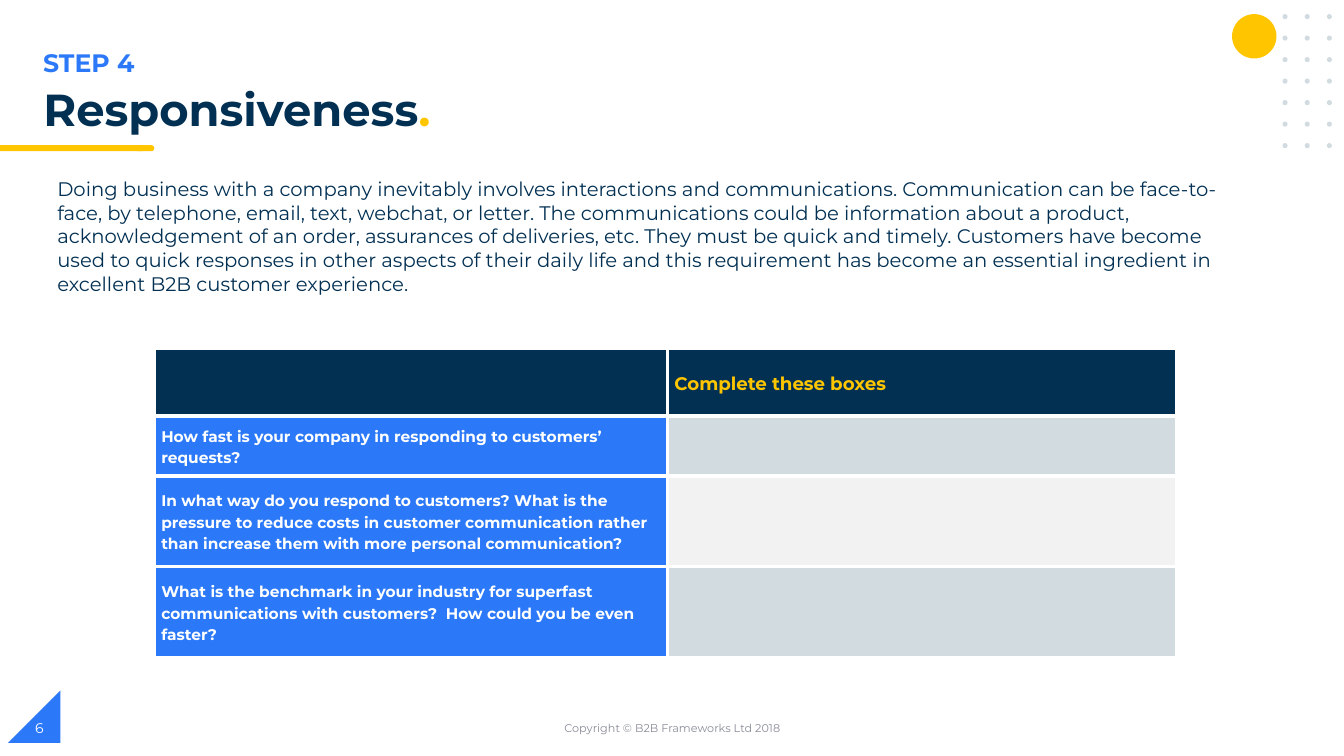
import dataclasses

import pptx
import pptx.dml.color
import pptx.enum.shapes
import pptx.enum.text
import pptx.oxml
import pptx.oxml.ns
import pptx.slide
import pptx.table
import pptx.text.text
import pptx.util

Inches = pptx.util.Inches
RGBColor = pptx.dml.color.RGBColor
Shape = pptx.enum.shapes.MSO_SHAPE
Align = pptx.enum.text.PP_ALIGN
Anchor = pptx.enum.text.MSO_ANCHOR

NAVY = RGBColor(0x02, 0x30, 0x53)
BLUE = RGBColor(0x2B, 0x79, 0xF8)
YELLOW = RGBColor(0xFF, 0xC6, 0x00)
MIST = RGBColor(0xD1, 0xDB, 0xE0)
PALE = RGBColor(0xF2, 0xF2, 0xF2)
GREY = RGBColor(0x88, 0x8C, 0x97)
WHITE = RGBColor(0xFF, 0xFF, 0xFF)
FONT = "Montserrat"


@dataclasses.dataclass(frozen=True)
class Box:
    left: float
    top: float
    width: float
    height: float

    def lengths(self) -> tuple[int, int, int, int]:
        return Inches(self.left), Inches(self.top), Inches(self.width), Inches(self.height)


@dataclasses.dataclass(frozen=True)
class Ornament:
    kind: Shape
    box: Box
    color: RGBColor
    flipped: bool = False


@dataclasses.dataclass(frozen=True)
class Label:
    box: Box
    text: str
    size: float
    color: RGBColor
    bold: bool = False
    align: Align = Align.LEFT
    anchor: Anchor = Anchor.TOP


@dataclasses.dataclass(frozen=True)
class Row:
    height: float
    question: str
    heading: str
    size: float
    fills: tuple[RGBColor, RGBColor]


DOTS = [
    Ornament(Shape.OVAL, Box(12.72 + 0.22 * column, 0.14 + 1.28 * row / 6, 0.05, 0.05), MIST)
    for row in range(7)
    for column in range(3)
]
ORNAMENTS = [
    Ornament(Shape.RIGHT_TRIANGLE, Box(0.08, 6.85, 0.52, 0.52), BLUE, flipped=True),
    Ornament(Shape.FLOWCHART_TERMINATOR, Box(1.34, 1.44, 0.19, 0.06), YELLOW),
    Ornament(Shape.RECTANGLE, Box(0, 1.44, 1.41, 0.06), YELLOW),
    Ornament(Shape.OVAL, Box(12.22, 0.14, 0.44, 0.44), YELLOW),
    *DOTS,
]
INTRODUCTION = (
    "Doing business with a company inevitably involves interactions and communications. "
    "Communication can be face-to-face, by telephone, email, text, webchat, or letter. "
    "The communications could be information about a product, acknowledgement of an order, "
    "assurances of deliveries, etc. They must be quick and timely. Customers have become used "
    "to quick responses in other aspects of their daily life and this requirement has become "
    "an essential ingredient in excellent B2B customer experience."
)
LABELS = [
    Label(Box(0.33, 0.42, 6.69, 0.4), "STEP 4", 18, BLUE, bold=True),
    Label(Box(0.47, 1.71, 11.87, 1.28), INTRODUCTION, 14, NAVY),
    Label(Box(4.42, 7.02, 4.5, 0.4), "Copyright © B2B Frameworks Ltd 2018", 8, GREY,
          align=Align.CENTER, anchor=Anchor.MIDDLE),
    Label(Box(0.25, 7.02, 3, 0.4), "6", 10, WHITE, anchor=Anchor.MIDDLE),
]
TITLE_BOX = Box(0.33, 0.82, 12.08, 0.56)
COLUMN_WIDTHS = (5.09, 5.05)
ROWS = [
    Row(0.68, "", "Complete these boxes", 13, (NAVY, NAVY)),
    Row(0.59, "How fast is your company in responding to customers’ requests?", "", 11,
        (BLUE, MIST)),
    Row(0.9, "In what way do you respond to customers? What is the pressure to reduce costs in "
        "customer communication rather than increase them with more personal communication?",
        "", 11, (BLUE, PALE)),
    Row(0.91, "What is the benchmark in your industry for superfast communications with "
        "customers?  How could you be even faster?", "", 11, (BLUE, MIST)),
]


def add_run(paragraph: pptx.text.text._Paragraph, text: str, size: float,
            color: RGBColor, bold: bool) -> None:
    run = paragraph.add_run()
    run.text = text
    run.font.name = FONT
    run.font.size = pptx.util.Pt(size)
    run.font.bold = bold
    run.font.color.rgb = color


def add_ornament(slide: pptx.slide.Slide, ornament: Ornament) -> None:
    shape = slide.shapes.add_shape(ornament.kind, *ornament.box.lengths())
    shape.shadow.inherit = False
    shape.fill.solid()
    shape.fill.fore_color.rgb = ornament.color
    shape.line.fill.background()
    if ornament.flipped:
        shape._element.spPr.xfrm.set("flipH", "1")


def add_label(slide: pptx.slide.Slide, label: Label) -> None:
    frame = slide.shapes.add_textbox(*label.box.lengths()).text_frame
    frame.word_wrap = True
    frame.vertical_anchor = label.anchor
    paragraph = frame.paragraphs[0]
    paragraph.alignment = label.align
    add_run(paragraph, label.text, label.size, label.color, label.bold)


def fill_title(slide: pptx.slide.Slide) -> None:
    title = slide.shapes.title
    title.left, title.top, title.width, title.height = TITLE_BOX.lengths()
    frame = title.text_frame
    frame.auto_size = pptx.enum.text.MSO_AUTO_SIZE.NONE
    frame.vertical_anchor = Anchor.TOP
    paragraph = frame.paragraphs[0]
    paragraph.alignment = Align.LEFT
    paragraph.line_spacing = 0.9
    add_run(paragraph, "Responsiveness", 32, NAVY, True)
    add_run(paragraph, ".", 32, YELLOW, True)


def add_borders(cell: pptx.table._Cell) -> None:
    properties = cell._tc.get_or_add_tcPr()
    for side in ("lnL", "lnR", "lnT", "lnB"):
        properties.append(pptx.oxml.parse_xml(
            f'<a:{side} {pptx.oxml.ns.nsdecls("a")} w="{pptx.util.Pt(3)}">'
            f'<a:solidFill><a:srgbClr val="{WHITE}"/></a:solidFill></a:{side}>'
        ))


def fill_cell(cell: pptx.table._Cell, text: str, size: float, color: RGBColor,
              fill: RGBColor) -> None:
    add_borders(cell)
    cell.fill.solid()
    cell.fill.fore_color.rgb = fill
    cell.vertical_anchor = Anchor.MIDDLE
    cell.margin_left = cell.margin_right = Inches(0.07)
    cell.margin_top = cell.margin_bottom = 0
    if text:
        paragraph = cell.text_frame.paragraphs[0]
        paragraph.line_spacing = 1.15
        add_run(paragraph, text, size, color, True)


def add_question_table(slide: pptx.slide.Slide) -> None:
    box = Box(1.53, 3.45, sum(COLUMN_WIDTHS), sum(row.height for row in ROWS))
    table = slide.shapes.add_table(len(ROWS), len(COLUMN_WIDTHS), *box.lengths()).table
    for column, width in zip(table.columns, COLUMN_WIDTHS):
        column.width = Inches(width)
    for index, row in enumerate(ROWS):
        table.rows[index].height = Inches(row.height)
        fill_cell(table.cell(index, 0), row.question, row.size, WHITE, row.fills[0])
        fill_cell(table.cell(index, 1), row.heading, row.size, YELLOW, row.fills[1])


def main() -> None:
    presentation = pptx.Presentation()
    presentation.slide_width = Inches(13.33)
    presentation.slide_height = Inches(7.5)
    slide = presentation.slides.add_slide(presentation.slide_layouts.get_by_name("Title Only"))
    for ornament in ORNAMENTS:
        add_ornament(slide, ornament)
    fill_title(slide)
    for label in LABELS:
        add_label(slide, label)
    add_question_table(slide)
    presentation.save("out.pptx")


if __name__ == "__main__":
    main()
